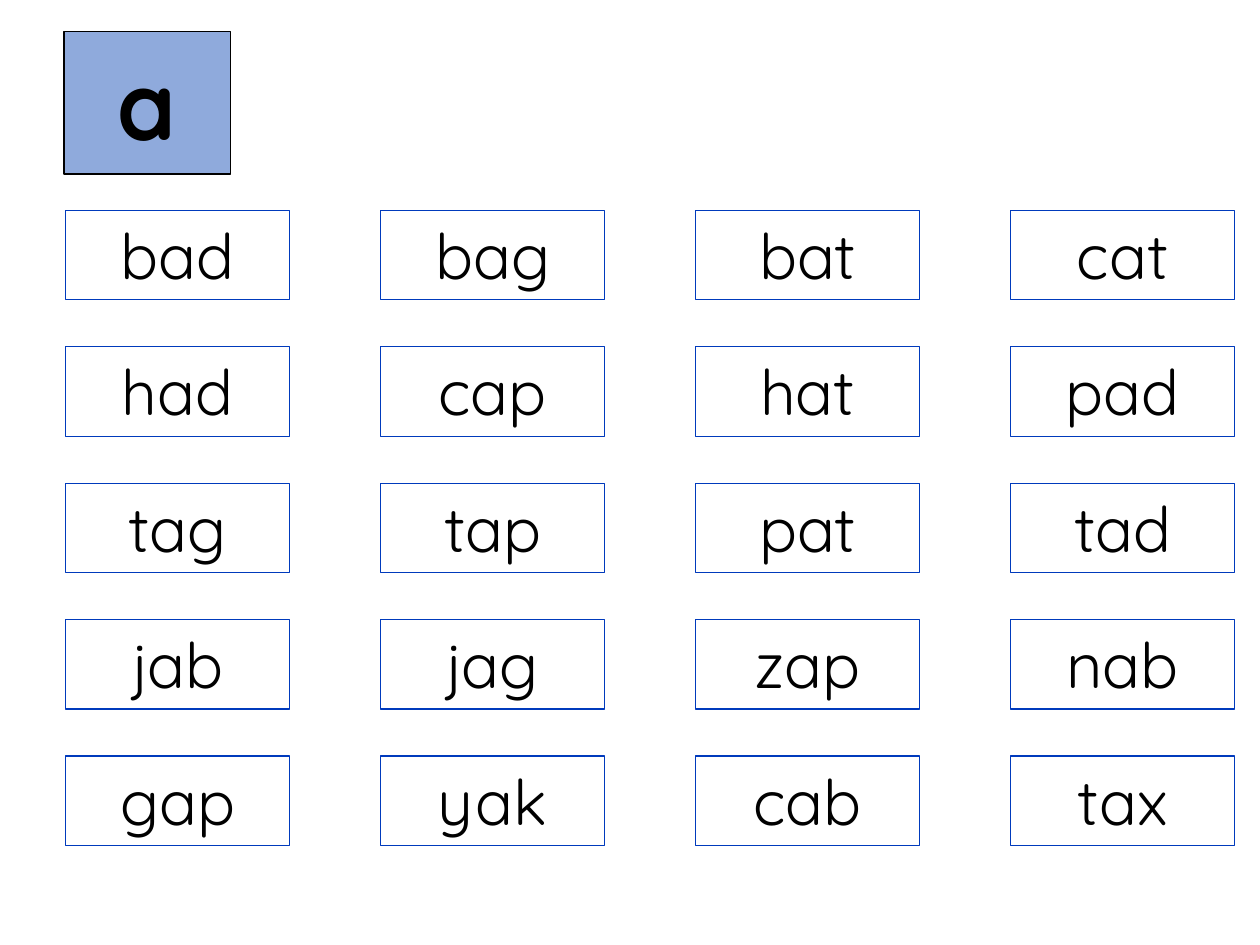
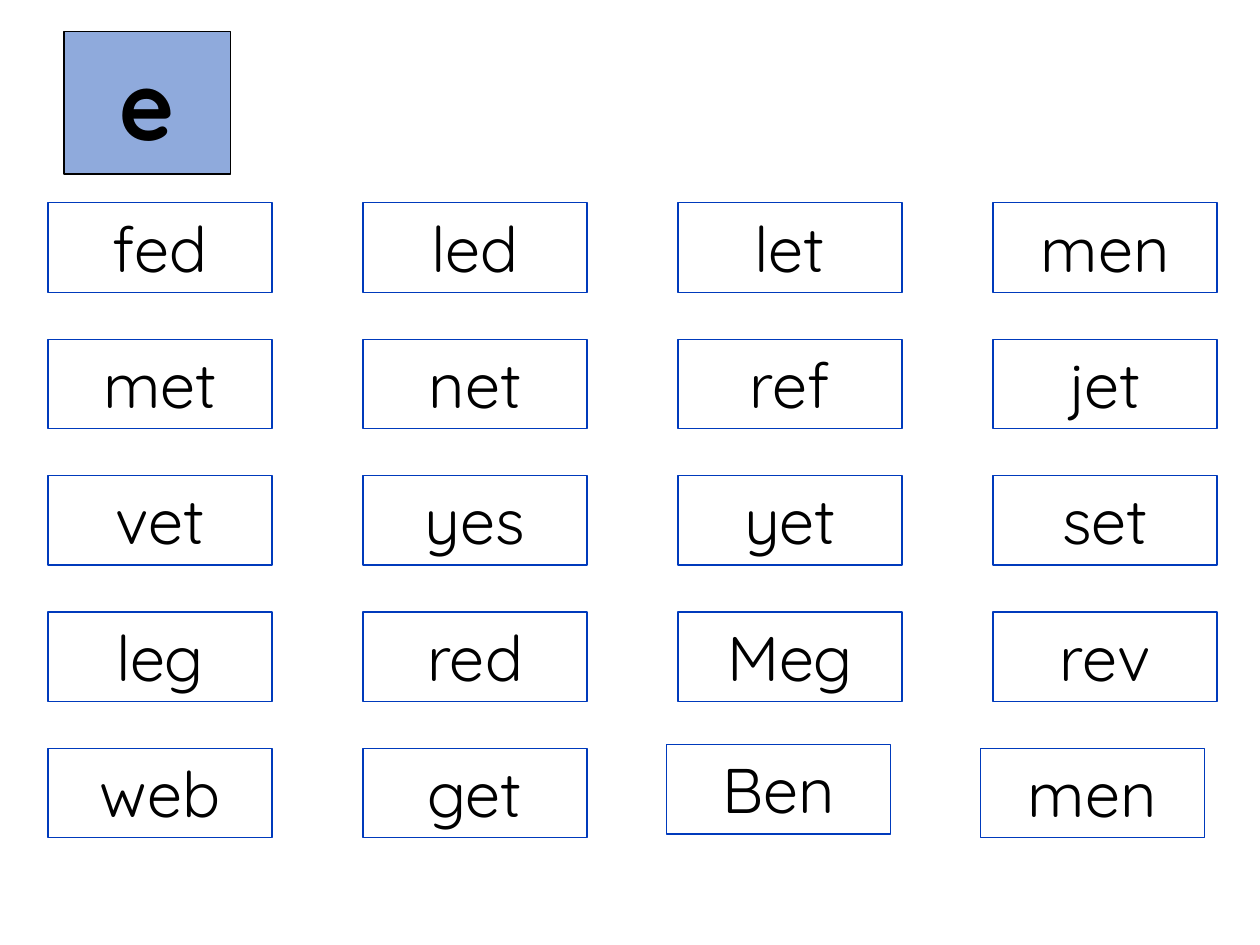
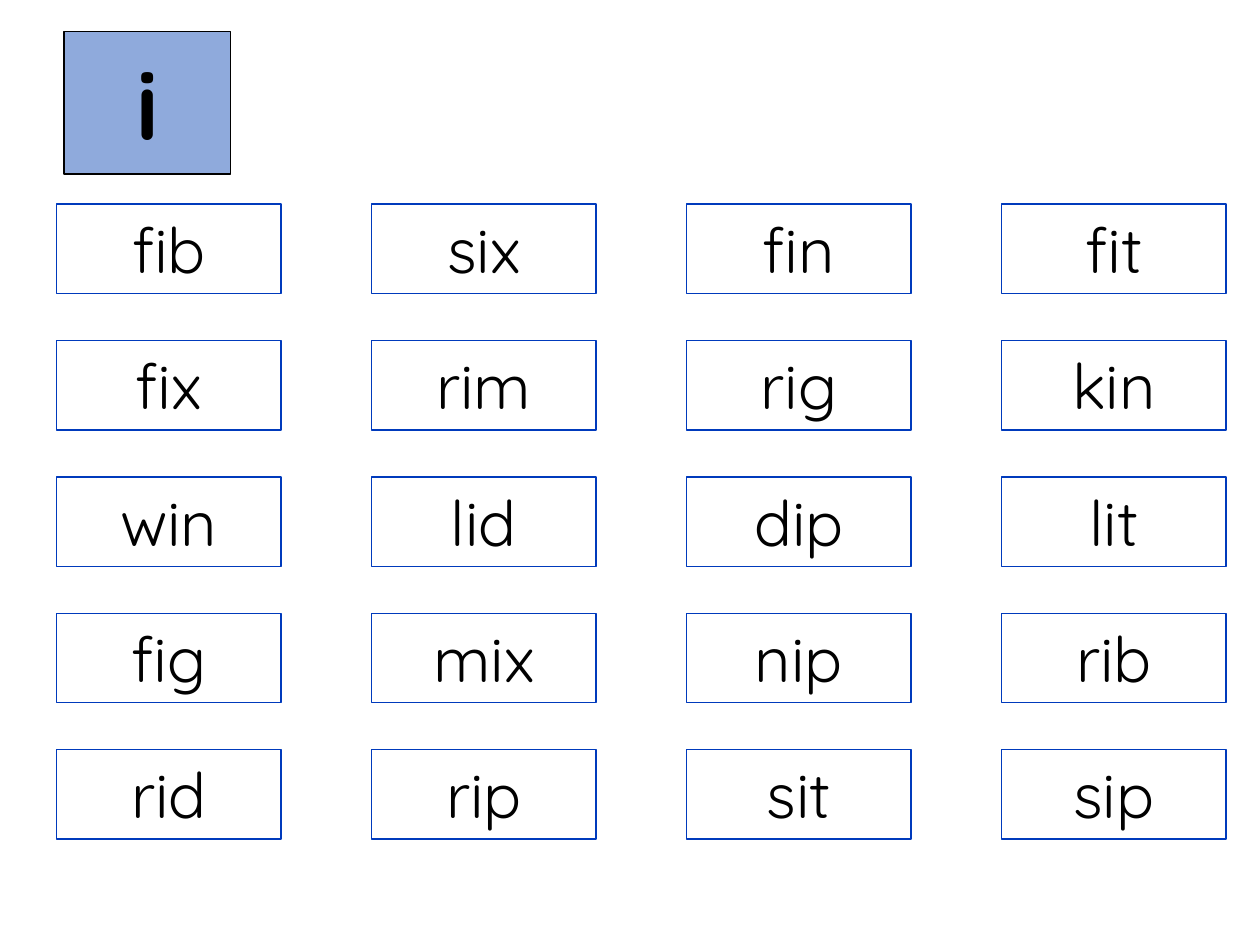
from pptx import Presentation
from pptx.dml.color import RGBColor
from pptx.enum.text import MSO_ANCHOR, MSO_AUTO_SIZE, PP_ALIGN
from pptx.util import Inches, Pt

CENTER = PP_ALIGN.CENTER
TOP, MIDDLE = MSO_ANCHOR.TOP, MSO_ANCHOR.MIDDLE
FIXED, GROW = MSO_AUTO_SIZE.NONE, MSO_AUTO_SIZE.SHAPE_TO_FIT_TEXT
TITLE_ONLY = 5

FONT = "Quicksand"
COLORS = {"text": "000000", "tile": "8FAADC", "tile_line": "000000", "card_line": "003ABC"}

TILE_BOX = (0.51, 0.25, 1.32, 1.13)
GRID_WIDTH, GRID_HEIGHT = 9.28, 5.04
CARD_WIDTH, CARD_HEIGHT = 1.78, 0.71

# Each sound: letter, left and top of the grid, rows of words, and shifts of single cards by (row, column)
SOUNDS = [
    ("a", 0.52, 1.67, [
        "bad bag bat cat",
        "had cap hat pad",
        "tag tap pat tad",
        "jab jag zap nab",
        "gap yak cab tax",
    ], {}),
    ("e", 0.38, 1.61, [
        "fed led let men",
        "met net ref jet",
        "vet yes yet set",
        "leg red Meg rev",
        "web get Ben men",
    ], {(4, 2): (-0.09, -0.03), (4, 3): (-0.1, 0)}),
    ("i", 0.45, 1.62, [
        "fib six fin fit",
        "fix rim rig kin",
        "win lid dip lit",
        "fig mix nip rib",
        "rid rip sit sip",
    ], {}),
]


def color(name):
    return RGBColor.from_string(COLORS[name])


def outline(shape, line_color, width):
    shape.line.color.rgb = color(line_color)
    shape.line.width = Pt(width)


def write(shape, text, size, bold, anchor, auto_size):
    frame = shape.text_frame
    frame.text = text
    frame.word_wrap = True
    frame.auto_size = auto_size
    frame.vertical_anchor = anchor
    paragraph = frame.paragraphs[0]
    paragraph.alignment = CENTER
    font = paragraph.runs[0].font
    font.name, font.size, font.bold = FONT, Pt(size), bold
    font.color.rgb = color("text")


def add_letter_tile(slide, letter, box):
    tile = slide.shapes.title
    tile.left, tile.top, tile.width, tile.height = map(Inches, box)
    tile.fill.solid()
    tile.fill.fore_color.rgb = color("tile")
    outline(tile, "tile_line", 1)
    write(tile, letter, 54, True, MIDDLE, FIXED)


def add_word_card(slide, word, left, top):
    card = slide.shapes.add_textbox(
        Inches(left), Inches(top), Inches(CARD_WIDTH), Inches(CARD_HEIGHT))
    outline(card, "card_line", 0.75)
    write(card, word, 36, False, TOP, GROW)


def add_word_grid(slide, rows, box, shifts):
    """Spread the words evenly over the box, moving the cards named in shifts."""
    left, top, width, height = box
    words = [row.split() for row in rows]
    column_step = (width - CARD_WIDTH) / (len(words[0]) - 1)
    row_step = (height - CARD_HEIGHT) / (len(words) - 1)
    for row, row_words in enumerate(words):
        for column, word in enumerate(row_words):
            shift_x, shift_y = shifts.get((row, column), (0, 0))
            add_word_card(slide, word, left + column * column_step + shift_x,
                          top + row * row_step + shift_y)


def add_sound_slide(deck, letter, left, top, rows, shifts):
    slide = deck.slides.add_slide(deck.slide_layouts[TITLE_ONLY])
    add_letter_tile(slide, letter, TILE_BOX)
    add_word_grid(slide, rows, (left, top, GRID_WIDTH, GRID_HEIGHT), shifts)


def main():
    deck = Presentation()
    deck.slide_width, deck.slide_height = Inches(10), Inches(7.5)
    for sound in SOUNDS:
        add_sound_slide(deck, *sound)
    deck.save("out.pptx")


if __name__ == "__main__":
    main()
